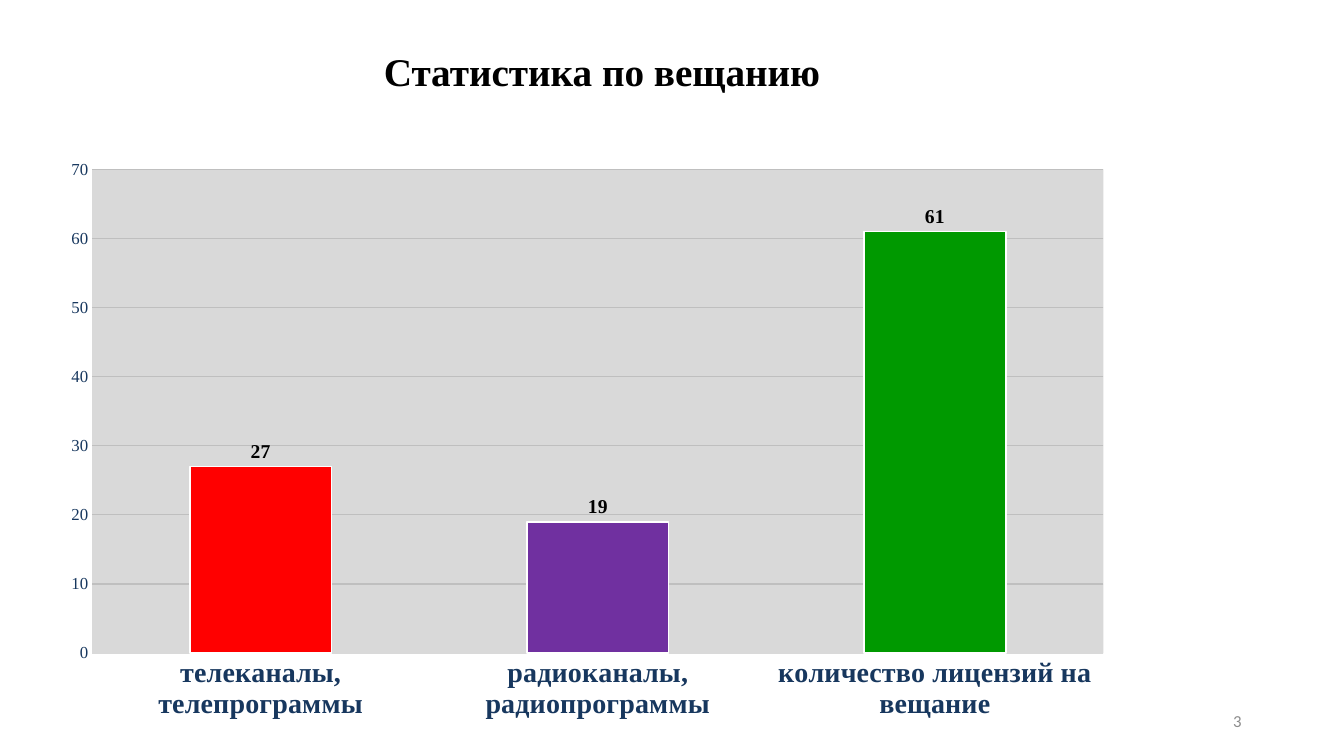
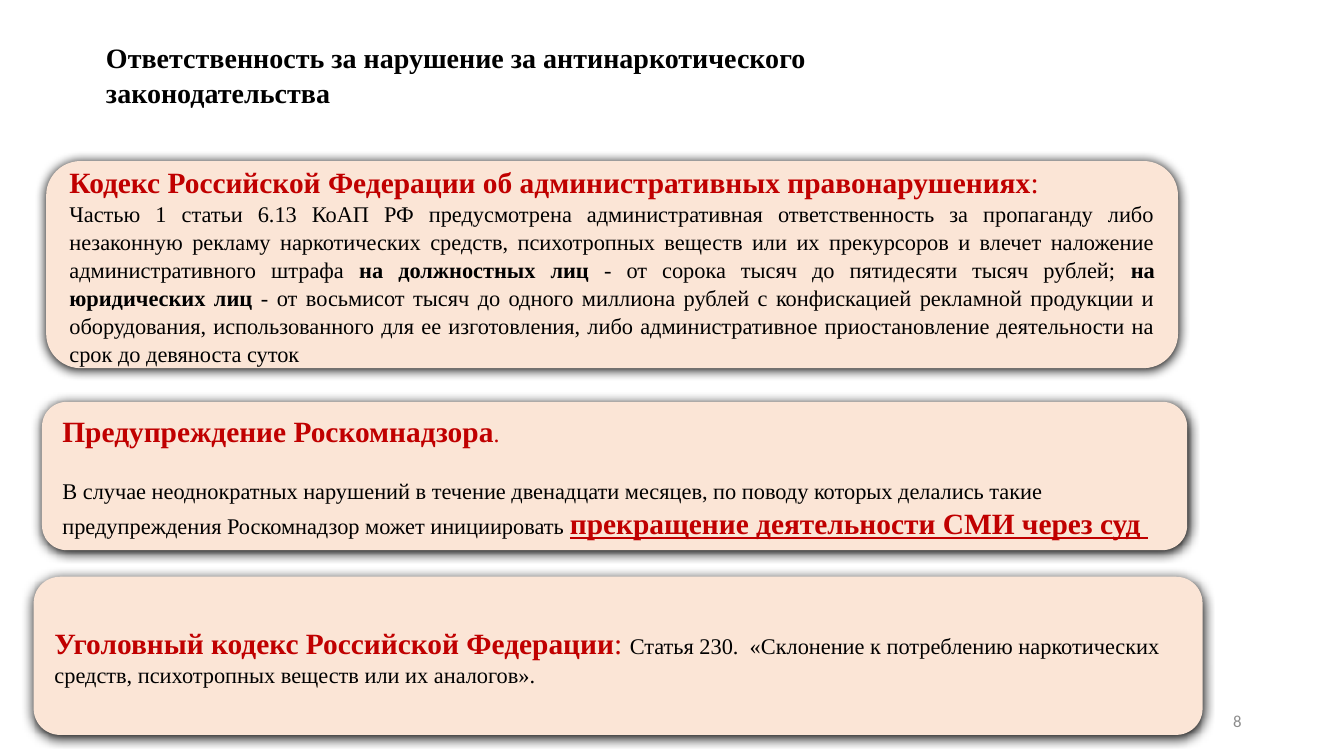
"""Builds two slides on broadcasting statistics and liability under anti-drug law."""
from lxml.etree import SubElement
from pptx import Presentation
from pptx.chart.data import CategoryChartData
from pptx.dml.color import RGBColor
from pptx.enum.chart import XL_CHART_TYPE, XL_LABEL_POSITION, XL_TICK_MARK
from pptx.enum.shapes import MSO_SHAPE
from pptx.enum.text import MSO_ANCHOR, MSO_AUTO_SIZE, PP_ALIGN
from pptx.oxml import parse_xml
from pptx.oxml.ns import nsdecls, qn
from pptx.util import Pt

COLOURS = {
    "text": "000000", "heading": "C00000", "card": "FBE5D6", "number": "8C8C8C",
    "axis": "17375E", "plot": "D9D9D9", "grid": "BFBFBF", "edge": "FFFFFF",
    "tv": "FF0000", "radio": "7030A0", "licences": "009900",
}
SERIF = "Times New Roman"
SANS = "Calibri"
NUMBER_BOX = (678, 500, 216, 29)

HEADING = {"size": 21, "colour": "heading", "bold": True}
HEADING_END = {"size": 21, "colour": "heading"}
BODY = {"size": 16}
STRONG = {"size": 16, "bold": True}

CODE_CARD = [
    [("Кодекс Российской Федерации об административных правонарушениях", HEADING),
     (": ", HEADING_END)],
    [("Частью 1 статьи 6.13 КоАП РФ предусмотрена административная ответственность "
      "за пропаганду либо незаконную рекламу наркотических средств, психотропных "
      "веществ или их прекурсоров и влечет наложение административного штрафа ", BODY),
     ("на должностных лиц ", STRONG),
     ("- от сорока тысяч до пятидесяти тысяч рублей; ", BODY),
     ("на юридических лиц ", STRONG),
     ("- от восьмисот тысяч до одного миллиона рублей с конфискацией рекламной "
      "продукции и оборудования, использованного для ее изготовления, либо "
      "административное приостановление деятельности на срок до девяноста суток", BODY)],
]
WARNING_CARD = [
    [("Предупреждение Роскомнадзора", HEADING), (".", {"size": 17, "colour": "heading"})],
    [("В случае неоднократных нарушений в течение двенадцати месяцев, по поводу "
      "которых делались такие предупреждения Роскомнадзор может инициировать ", BODY),
     ("прекращение деятельности СМИ через суд ", {**HEADING, "underline": True})],
]
CRIMINAL_CARD = [
    [("Уголовный кодекс Российской Федерации", HEADING), (": ", HEADING_END),
     ("Статья 230.  «Склонение к потреблению наркотических средств, психотропных "
      "веществ или их аналогов».", BODY)],
]
CARDS = [
    ((33, 115, 808.5, 148), CODE_CARD, PP_ALIGN.JUSTIFY, 0),
    ((30, 287, 818, 106), WARNING_CARD, PP_ALIGN.LEFT, 20),
    ((24, 412, 835, 113), CRIMINAL_CARD, PP_ALIGN.LEFT, 0),
]


def rgb(key):
    """Return the palette colour with this key."""
    return RGBColor.from_string(COLOURS[key])


def style_font(font, size, colour="text", bold=False, underline=False, face=SERIF):
    """Apply the shared type style to a font."""
    font.name, font.size, font.bold = face, Pt(size), bold
    font.underline = underline
    font.color.rgb = rgb(colour)


def add_run(paragraph, text, **style):
    """Append one styled run."""
    run = paragraph.add_run()
    run.text = text
    style_font(run.font, **style)


def set_frame(frame, anchor, side=7.2, edge=3.6):
    """Set wrapping, anchor and insets of a text frame."""
    frame.word_wrap = True
    frame.auto_size = MSO_AUTO_SIZE.NONE
    frame.vertical_anchor = anchor
    frame.margin_left = frame.margin_right = Pt(side)
    frame.margin_top = frame.margin_bottom = Pt(edge)


def add_slide(deck, number):
    """Add a title-only slide with its page number."""
    slide = deck.slides.add_slide(deck.slide_layouts[5])
    page = slide.shapes.add_textbox(*map(Pt, NUMBER_BOX)).text_frame
    set_frame(page, MSO_ANCHOR.MIDDLE)
    page.paragraphs[0].alignment = PP_ALIGN.RIGHT
    add_run(page.paragraphs[0], number, size=12, colour="number", face=SANS)
    return slide


def set_title(slide, box, text, size, align, anchor, spacing):
    """Place and format the slide title."""
    title = slide.shapes.title
    title.left, title.top, title.width, title.height = map(Pt, box)
    set_frame(title.text_frame, anchor)
    paragraph = title.text_frame.paragraphs[0]
    paragraph.alignment, paragraph.line_spacing = align, spacing
    add_run(paragraph, text, size=size, bold=True)


def set_plot_area(chart):
    """Fix the inner plot rectangle and fill it."""
    area = chart._chartSpace.chart.plotArea
    for layout in area.findall(qn("c:layout")):
        area.remove(layout)
    sizes = "".join(f'<c:{tag} val="{value}"/>' for tag, value in
                    (("x", 0.056), ("y", 0.032), ("w", 0.943), ("h", 0.848)))
    area.insert(0, parse_xml(
        f'<c:layout {nsdecls("c")}><c:manualLayout><c:layoutTarget val="inner"/>'
        f'<c:xMode val="edge"/><c:yMode val="edge"/>{sizes}</c:manualLayout></c:layout>'))
    area.append(parse_xml(
        f'<c:spPr {nsdecls("c", "a")}><a:solidFill><a:srgbClr val="{COLOURS["plot"]}"/>'
        f'</a:solidFill></c:spPr>'))


def style_axes(chart):
    """Format the category and value axes."""
    categories, values = chart.category_axis, chart.value_axis
    for axis, size, bold in ((categories, 20, True), (values, 12, False)):
        axis.major_tick_mark = axis.minor_tick_mark = XL_TICK_MARK.NONE
        style_font(axis.tick_labels.font, size, "axis", bold)
    categories.format.line.color.rgb = rgb("plot")
    categories.format.line.width = Pt(0.75)
    values.minimum_scale, values.maximum_scale, values.major_unit = 0, 70, 10
    values.format.line.fill.background()
    values.major_gridlines.format.line.color.rgb = rgb("grid")
    values.major_gridlines.format.line.width = Pt(0.75)


def add_broadcast_chart(slide, box):
    """Draw the column chart of channels and licences."""
    data = CategoryChartData()
    data.categories = ["телеканалы, телепрограммы", "радиоканалы, радиопрограммы",
                       "количество лицензий на вещание"]
    data.add_series("Series 1", [27, 19, 61])
    chart = slide.shapes.add_chart(
        XL_CHART_TYPE.COLUMN_CLUSTERED, *map(Pt, box), data).chart
    chart.has_title = chart.has_legend = False
    style_font(chart.font, 10, face=SANS)
    style_axes(chart)
    plot = chart.plots[0]
    plot.gap_width, plot.overlap, plot.vary_by_categories = 138, -20, False
    plot.has_data_labels = True
    labels = plot.data_labels
    labels.show_value = True
    labels.position = XL_LABEL_POSITION.OUTSIDE_END
    style_font(labels.font, 14, bold=True)
    for index, key in enumerate(("tv", "radio", "licences")):
        column = plot.series[0].points[index].format
        column.fill.solid()
        column.fill.fore_color.rgb = rgb(key)
        column.line.color.rgb = rgb("edge")
        column.line.width = Pt(1.25)
    set_plot_area(chart)


def add_shadow(shape):
    """Give a shape a soft black shadow falling straight down."""
    shape.shadow.inherit = False
    effects = shape._element.spPr.find(qn("a:effectLst"))
    shadow = SubElement(effects, qn("a:outerShdw"), blurRad=str(Pt(8.5)),
                        dist=str(Pt(1)), dir="5400000", algn="t", rotWithShape="0")
    SubElement(shadow, qn("a:srgbClr"), val=COLOURS["text"])


def add_card(slide, box, paragraphs, align, gap):
    """Draw one rounded card with its paragraphs."""
    card = slide.shapes.add_shape(MSO_SHAPE.ROUNDED_RECTANGLE, *map(Pt, box))
    card.fill.solid()
    card.fill.fore_color.rgb = rgb("card")
    card.line.fill.background()
    add_shadow(card)
    frame = card.text_frame
    set_frame(frame, MSO_ANCHOR.MIDDLE, 9.4, 5)
    for index, runs in enumerate(paragraphs):
        paragraph = frame.add_paragraph() if index else frame.paragraphs[0]
        paragraph.alignment, paragraph.line_spacing = align, 1.04
        if index:
            paragraph.space_before = Pt(gap)
        for text, style in runs:
            add_run(paragraph, text, **style)


def build_statistics(deck):
    """Build the slide with the broadcasting chart."""
    slide = add_slide(deck, "3")
    set_title(slide, (70, 24, 720, 47.5), "Статистика по вещанию", 28,
              PP_ALIGN.CENTER, MSO_ANCHOR.BOTTOM, 0.9)
    add_broadcast_chart(slide, (23, 108, 766, 407.5))


def build_liability(deck):
    """Build the slide with the three liability cards."""
    slide = add_slide(deck, "8")
    set_title(slide, (68.5, 24.5, 672, 55.5),
              "Ответственность за нарушение за антинаркотического законодательства",
              20, PP_ALIGN.LEFT, MSO_ANCHOR.TOP, 1.04)
    for card in CARDS:
        add_card(slide, *card)


def main():
    """Build and save the deck."""
    deck = Presentation()
    deck.slide_width, deck.slide_height = Pt(960), Pt(540)
    build_statistics(deck)
    build_liability(deck)
    deck.save("out.pptx")


if __name__ == "__main__":
    main()
